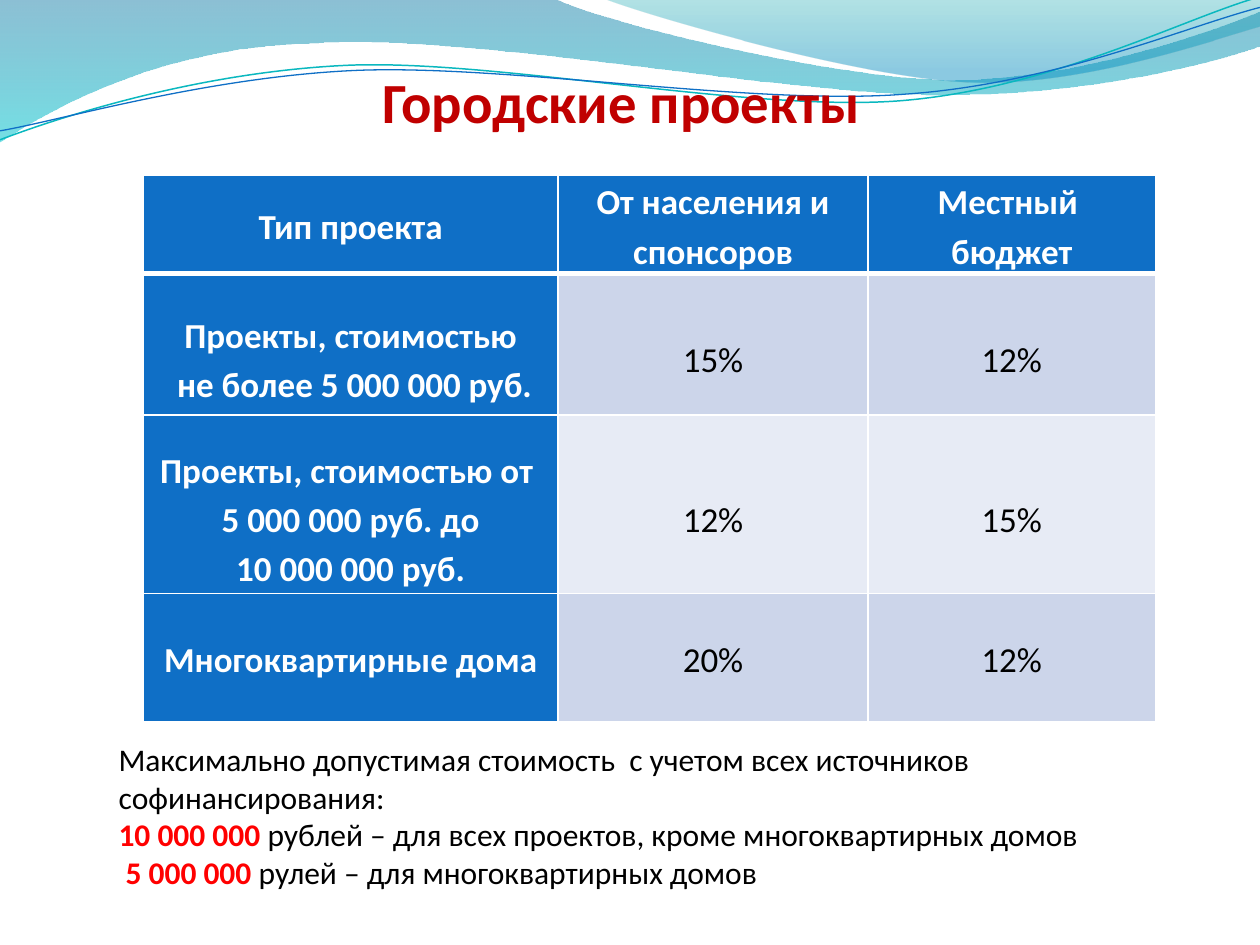
from dataclasses import dataclass

from lxml.etree import SubElement
from pptx import Presentation
from pptx.dml.color import RGBColor
from pptx.enum.text import MSO_ANCHOR, MSO_AUTO_SIZE, PP_ALIGN
from pptx.oxml.ns import qn
from pptx.util import Cm, Pt


@dataclass(frozen=True)
class Theme:
    font: str = "Calibri"
    title_size: float = 32.4
    table_size: float = 20
    note_size: float = 18
    title: str = "C00000"
    accent: str = "0F6FC6"
    teal: str = "0AB8BF"
    bands: tuple = ("CCD5EA", "E7EBF5")
    white: str = "FFFFFF"
    text: str = "000000"
    highlight: str = "FF0000"


THEME = Theme()

NBSP = chr(160)  # keeps the digit groups of an amount on one line
FIVE_MILLION = NBSP.join(["5", "000", "000"])
TEN_MILLION = NBSP.join(["10", "000", "000"])

TITLE = "Городские проекты"
TABLE = [
    ["Тип проекта", "От населения и спонсоров", "Местный \nбюджет"],
    [f"Проекты, стоимостью\n не более {FIVE_MILLION}{NBSP}руб.", "15%", "12%"],
    [f"Проекты, стоимостью от  {FIVE_MILLION}{NBSP}руб. до {TEN_MILLION} руб.", "12%", "15%"],
    ["Многоквартирные дома", "20%", "12%"],
]
COLUMN_WIDTHS = [8.36, 6.25, 5.79]
ROW_HEIGHTS = [0.81, 2.85, 3.6, 2.58]  # the heading row grows with its text
TABLE_HEIGHT = 10.98
TOP_INSETS = [0, 0.53, 0.53, 0]

# Each paragraph: highlighted start, plain rest
NOTE = [
    ("", f"Максимально допустимая стоимость{NBSP} с учетом всех источников софинансирования:"),
    ("10 000 000 ", "рублей – для всех проектов, кроме многоквартирных домов"),
    (f" {FIVE_MILLION} ", "рулей – для многоквартирных домов"),
]

# Wave outlines in cm: steps of one point (straight) or three (Bézier), the first is the start
# Gradient stops: position, colour, opacity in percent
FILLED_WAVES = [
    ([[(0, 0)],
      [(11.18, -0.03)],
      [(12.09, 0.43), (16.87, 1.6), (19.25, 1.6)],
      [(21.67, 1.6), (24.33, 0.66), (25.4, 0.23)],
      [(25.43, 0.91)],
      [(24.97, 1.12), (22.1, 1.93), (18.95, 1.91)],
      [(15.8, 1.91), (9.7, 0.71), (6.53, 0.86)],
      [(3.28, 0.91), (1.17, 2.11), (-0.03, 2.87)]],
     [(0, "0074A1", 45), (100, "00C6CF", 55)]),
    ([[(12.17, -0.03)],
      [(12.93, 0.28), (17.32, 1.57), (19.53, 1.65)],
      [(21.74, 1.75), (24.41, 0.81), (25.4, 0.53)],
      [(25.4, 0)]],
     [(0, "00A1A9", 30), (80, "008BBF", 45)]),
]
LINE_WAVES = [
    ([[(-0.05, 2.22)],
      [(1.17, 1.82), (4.01, 1.04), (7.04, 1.05)],
      [(10.03, 1.07), (15.01, 2.37), (18.08, 2.29)],
      [(21.13, 2.2), (23.88, 0.91), (25.4, 0.55)]],
     THEME.teal, 0.85),
    ([[(-0.05, 2.04)],
      [(1.14, 1.9), (4.17, 1.15), (7.19, 1.16)],
      [(10.24, 1.18), (15.14, 2.25), (18.19, 2.16)],
      [(21.23, 2.1), (23.95, 1.06), (25.45, 0.75)]],
     THEME.accent, 0.75),
]
LINE_ROTATION = -2.7


def color(code):
    return RGBColor.from_string(code)


def style_span(span, size, code, bold=False):
    span.font.name = THEME.font
    span.font.size = Pt(size)
    span.font.bold = bold
    span.font.color.rgb = color(code)


def set_insets(target, left, top, right, bottom):
    target.margin_left, target.margin_top = Cm(left), Cm(top)
    target.margin_right, target.margin_bottom = Cm(right), Cm(bottom)


def add_wave(shapes, steps, close):
    """Draw the outline through all points, then join each three into a Bézier curve."""
    points = [(Cm(x), Cm(y)) for step in steps for x, y in step]
    builder = shapes.build_freeform(*points[0])
    builder.add_line_segments(points[1:], close=close)
    wave = builder.convert_to_shape()
    wave.shadow.inherit = False
    segments = iter(list(wave.element.iter(qn("a:moveTo"), qn("a:lnTo"))))
    for step in steps:
        first, *others = [next(segments) for _ in step]
        if others:
            first.tag = qn("a:cubicBezTo")
            for other in others:
                first.append(other[0])
                other.getparent().remove(other)
    return wave


def add_waves(slide):
    for steps, stops in FILLED_WAVES:
        wave = add_wave(slide.shapes, steps, True)
        wave.line.fill.background()
        wave.fill.gradient()
        wave.fill.gradient_angle = 270
        for stop, (position, code, _) in zip(wave.fill.gradient_stops, stops):
            stop.position = position / 100
            stop.color.rgb = color(code)
        for node, (_, _, opacity) in zip(wave.element.iter(qn("a:srgbClr")), stops):
            SubElement(node, qn("a:alpha"), val=str(opacity * 1000))
    group = slide.shapes.add_group_shape()
    for steps, code, width in LINE_WAVES:
        wave = add_wave(group.shapes, steps, False)
        wave.rotation = LINE_ROTATION
        wave.fill.background()
        wave.line.color.rgb = color(code)
        wave.line.width = Pt(width)


def set_borders(cell, widths):
    properties = cell._tc.get_or_add_tcPr()
    for index, (side, width) in enumerate(widths.items()):
        line = SubElement(properties, qn(f"a:ln{side}"), w=str(Pt(width)))
        fill = SubElement(line, qn("a:solidFill"))
        SubElement(fill, qn("a:srgbClr"), val=THEME.white)
        properties.insert(index, line)


def add_project_table(slide):
    frame = slide.shapes.add_table(len(TABLE), len(TABLE[0]), Cm(2.89), Cm(3.53),
                                   Cm(sum(COLUMN_WIDTHS)), Cm(TABLE_HEIGHT))
    table = frame.table
    for column, width in zip(table.columns, COLUMN_WIDTHS):
        column.width = Cm(width)
    for r, (row, height) in enumerate(zip(table.rows, ROW_HEIGHTS)):
        row.height = Cm(height)
        for c, cell in enumerate(row.cells):
            heading = r == 0 or c == 0
            cell.text_frame.text = TABLE[r][c]
            cell.vertical_anchor = MSO_ANCHOR.MIDDLE
            set_insets(cell, 0, TOP_INSETS[r], 0, 0)
            cell.fill.solid()
            cell.fill.fore_color.rgb = color(THEME.accent if heading else THEME.bands[(r - 1) % 2])
            set_borders(cell, {"L": 1, "R": 1, "T": 3 if r == 1 else 1, "B": 3 if r == 0 else 1})
            for para in cell.text_frame.paragraphs:
                para.alignment = PP_ALIGN.CENTER
                para.line_spacing = 1.15
                for span in para.runs:
                    style_span(span, THEME.table_size, THEME.white if heading else THEME.text, heading)
    frame.height = Cm(TABLE_HEIGHT)


def place_title(slide):
    title = slide.shapes.title
    title.left, title.top, title.width, title.height = Cm(3.1), Cm(1.12), Cm(18.85), Cm(1.6)
    frame = title.text_frame
    frame.text = TITLE
    frame.auto_size = MSO_AUTO_SIZE.NONE
    frame.vertical_anchor = MSO_ANCHOR.BOTTOM
    set_insets(frame, 0, 0.13, 0, 0)
    para = frame.paragraphs[0]
    para.alignment = PP_ALIGN.CENTER
    style_span(para.runs[0], THEME.title_size, THEME.title, True)
    title.element.getparent().append(title.element)  # in front of the waves


def add_note(slide):
    box = slide.shapes.add_textbox(Cm(2.14), Cm(14.79), Cm(21.41), Cm(3.33))
    frame = box.text_frame
    frame.word_wrap = True
    frame.auto_size = MSO_AUTO_SIZE.SHAPE_TO_FIT_TEXT
    for index, (amount, rest) in enumerate(NOTE):
        para = frame.add_paragraph() if index else frame.paragraphs[0]
        for words, code, bold in ((amount, THEME.highlight, True), (rest, THEME.text, False)):
            if words:
                span = para.add_run()
                span.text = words
                style_span(span, THEME.note_size, code, bold)


def main():
    deck = Presentation()
    deck.slide_width, deck.slide_height = Cm(25.4), Cm(19.05)
    slide = deck.slides.add_slide(deck.slide_layouts.get_by_name("Title Only"))
    add_waves(slide)
    place_title(slide)
    add_project_table(slide)
    add_note(slide)
    deck.save("out.pptx")


if __name__ == "__main__":
    main()
